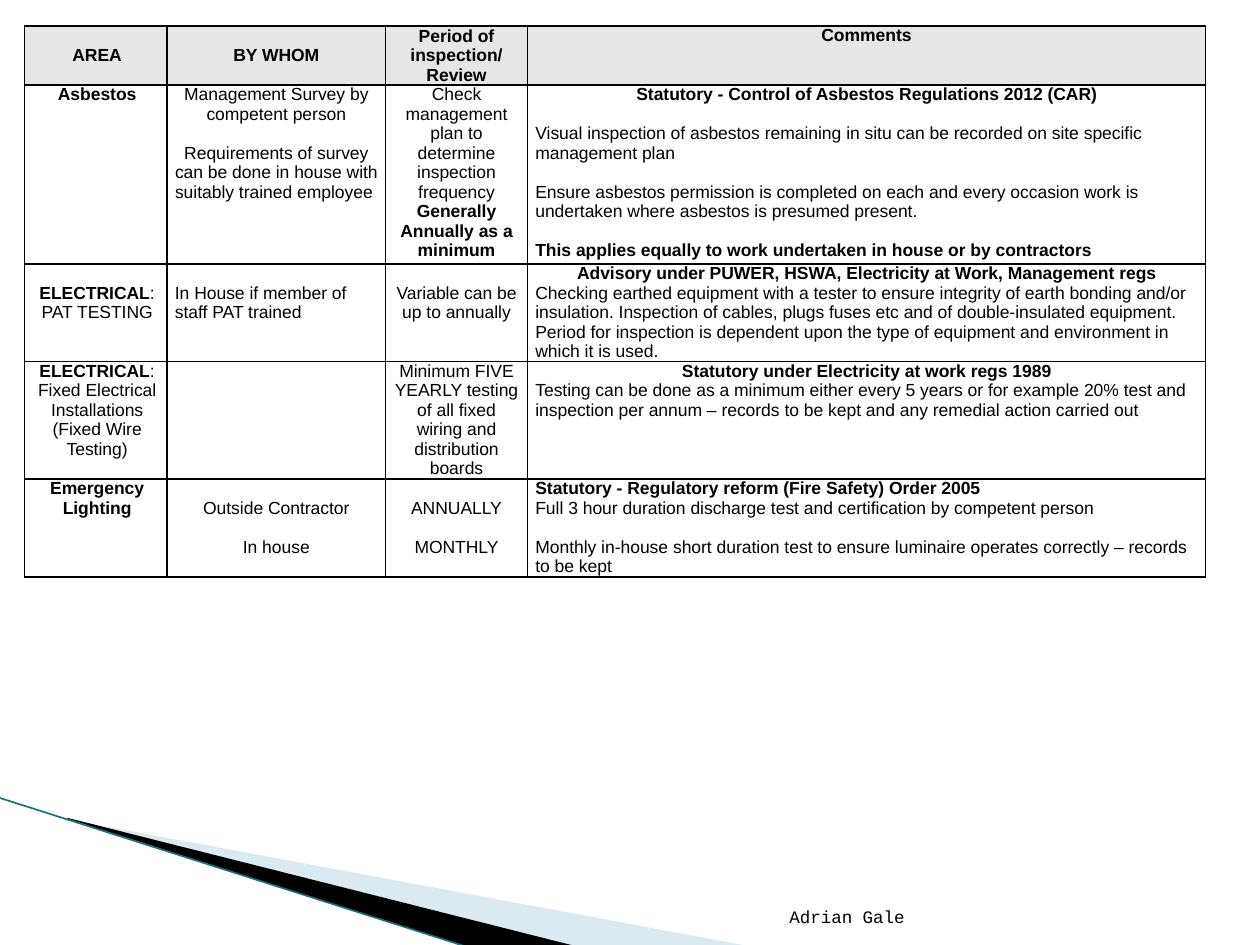
from dataclasses import dataclass

from lxml.etree import SubElement
from pptx import Presentation
from pptx.dml.color import RGBColor
from pptx.enum.shapes import MSO_CONNECTOR
from pptx.enum.text import MSO_ANCHOR, PP_ALIGN
from pptx.oxml.ns import qn
from pptx.util import Pt


@dataclass(frozen=True)
class Theme:
    black: str = "000000"
    header: str = "E6E6E6"
    pale_blue: str = "A0CBDC"
    teal: str = "1B6F82"
    font: str = "Arial"
    footer_font: str = "Courier New"
    size: float = 10
    line: float = 11.15


@dataclass(frozen=True)
class Para:
    """A paragraph; text between ** marks is bold, gap is in lines."""
    text: str
    left: bool = False
    gap: int = 0


THEME = Theme()
COLUMNS = [81.4, 124.8, 81.2, 387.4]
ROWS = [33.5, 102.3, 55.8, 67.1, 56]
# Lines of space above the text, for each body row and column
TOP_LINES = [(0, 0, 0, 0), (1, 1, 1, 0), (0, 0, 0, 0), (0, 1, 1, 0)]

HEADER = ["AREA", "BY WHOM", "Period of inspection/ Review", "Comments"]
BODY = [
    [
        [Para("**Asbestos**")],
        [Para("Management Survey by competent person"),
         Para("Requirements of survey can be done in house with suitably "
              "trained employee ", gap=1)],
        [Para("Check management plan to determine inspection frequency "
              "**Generally Annually as a minimum**")],
        [Para("**Statutory - Control of Asbestos Regulations 2012 (CAR)**"),
         Para("Visual inspection of asbestos remaining in situ can be recorded "
              "on site specific management plan", True, 1),
         Para("Ensure asbestos permission is completed on each and every "
              "occasion work is undertaken where asbestos is presumed present.",
              True, 1),
         Para("**This applies equally to work undertaken in house or by "
              "contractors**", True, 1)],
    ],
    [
        [Para("**ELECTRICAL**:"), Para("PAT TESTING")],
        [Para("In House if member of staff PAT trained", True)],
        [Para("Variable can be up to annually")],
        [Para("**Advisory under PUWER, HSWA, Electricity at Work, "
              "Management regs**"),
         Para("Checking earthed equipment with a tester to ensure integrity of "
              "earth bonding and/or insulation. Inspection of cables, plugs "
              "fuses etc and of double-insulated equipment.", True),
         Para("Period for inspection is dependent upon the type of equipment "
              "and environment in which it is used.", True)],
    ],
    [
        [Para("**ELECTRICAL**:"),
         Para("Fixed Electrical Installations (Fixed Wire Testing)")],
        [],
        [Para("Minimum FIVE YEARLY testing of all fixed wiring and "
              "distribution boards")],
        [Para("**Statutory under Electricity at work regs 1989**"),
         Para("Testing can be done as a minimum either every 5 years or for "
              "example 20% test and inspection per annum – records to be kept "
              "and any remedial action carried out", True)],
    ],
    [
        [Para("**Emergency Lighting**")],
        [Para("Outside Contractor"), Para("In house", gap=1)],
        [Para("ANNUALLY"), Para("MONTHLY", gap=1)],
        [Para("**Statutory - Regulatory reform (Fire Safety) Order 2005**", True),
         Para("Full 3 hour duration discharge test and certification by "
              "competent person", True),
         Para("Monthly in-house short duration test to ensure luminaire "
              "operates correctly – records to be kept", True, 1)],
    ],
]


def rgb(color):
    return RGBColor.from_string(color)


def style_run(r, font, bold=False):
    r.font.name = font
    r.font.size = Pt(THEME.size)
    r.font.bold = bold
    r.font.color.rgb = rgb(THEME.black)


def add_wedge(slide, points, color, alpha=None):
    """Draw a filled outline; points are kept to a hundredth."""
    fine = [(round(x * 100), round(y * 100)) for x, y in points]
    builder = slide.shapes.build_freeform(*fine[0], scale=Pt(1) / 100)
    builder.add_line_segments(fine[1:])
    sp = builder.convert_to_shape()
    sp.shadow.inherit = False
    sp.line.fill.background()
    sp.fill.solid()
    sp.fill.fore_color.rgb = rgb(color)
    if alpha is not None:
        clr = sp.fill._xPr.find(".//" + qn("a:srgbClr"))
        SubElement(clr, qn("a:alpha"), val=str(alpha * 1000))


def add_edge(slide, start, end):
    line = slide.shapes.add_connector(
        MSO_CONNECTOR.STRAIGHT, *map(Pt, start + end))
    line.line.color.rgb = rgb(THEME.teal)
    line.line.width = Pt(0.95)
    SubElement(line._element.spPr, qn("a:effectLst"))


def add_footer(slide, text):
    box = slide.shapes.add_textbox(Pt(344.9), Pt(504.7), Pt(185), Pt(28.8))
    tf = box.text_frame
    tf.word_wrap = True
    tf.vertical_anchor = MSO_ANCHOR.BOTTOM
    tf.margin_right = Pt(13)
    p = tf.paragraphs[0]
    p.text = text
    p.alignment = PP_ALIGN.RIGHT
    style_run(p.runs[0], THEME.footer_font)


def add_borders(cell):
    tc_pr = cell._tc.get_or_add_tcPr()
    for side in ("lnL", "lnR", "lnT", "lnB"):
        ln = SubElement(tc_pr, qn(f"a:{side}"), w=str(Pt(1)))
        fill = SubElement(ln, qn("a:solidFill"))
        SubElement(fill, qn("a:srgbClr"), val=THEME.black)


def fill_cell(cell, paras, top_lines=0, left=4.5):
    cell.margin_left, cell.margin_right = Pt(left), Pt(4.5)
    cell.margin_top = Pt(top_lines * THEME.line)
    cell.margin_bottom = 0
    add_borders(cell)
    tf = cell.text_frame
    for i, para in enumerate(paras):
        p = tf.add_paragraph() if i else tf.paragraphs[0]
        p.alignment = PP_ALIGN.LEFT if para.left else PP_ALIGN.CENTER
        p.line_spacing = Pt(THEME.line)
        if para.gap:
            p.space_before = Pt(para.gap * THEME.line)
        for j, part in enumerate(para.text.split("**")):
            if part:
                r = p.add_run()
                r.text = part
                style_run(r, THEME.font, bold=j % 2 == 1)


def add_inspection_table(slide):
    table = slide.shapes.add_table(
        len(ROWS), len(COLUMNS), Pt(14.1), Pt(15),
        Pt(sum(COLUMNS)), Pt(sum(ROWS))).table
    table.first_row = table.horz_banding = False
    for column, width in zip(table.columns, COLUMNS):
        column.width = Pt(width)
    for row, height in zip(table.rows, ROWS):
        row.height = Pt(height)

    lefts = [5.9, 4.5, 4.5, 4.5]
    for c, heading in enumerate(HEADER):
        cell = table.cell(0, c)
        fill_cell(cell, [Para(f"**{heading}**")], left=lefts[c])
        cell.fill.solid()
        cell.fill.fore_color.rgb = rgb(THEME.header)
        if heading != "Comments":
            cell.vertical_anchor = MSO_ANCHOR.MIDDLE
    for r, (cells, tops) in enumerate(zip(BODY, TOP_LINES), 1):
        for c, (paras, top) in enumerate(zip(cells, tops)):
            cell = table.cell(r, c)
            fill_cell(cell, paras, top, lefts[c])
            cell.fill.background()


def main():
    prs = Presentation()
    prs.slide_width, prs.slide_height = Pt(720), Pt(540)
    slide = prs.slides.add_slide(prs.slide_layouts.get_by_name("Blank"))
    add_wedge(slide, [(39.6, 468.4), (428.4, 540.7), (328.3, 540.7),
                      (39.6, 468)], THEME.pale_blue, alpha=40)
    add_wedge(slide, [(38.2, 467.3), (329, 540.7), (267.8, 541.4),
                      (38.9, 468)], THEME.black)
    add_edge(slide, (-0.7, 455.8), (267.8, 541.4))
    add_footer(slide, "Adrian Gale")
    add_inspection_table(slide)
    prs.save("out.pptx")


if __name__ == "__main__":
    main()
